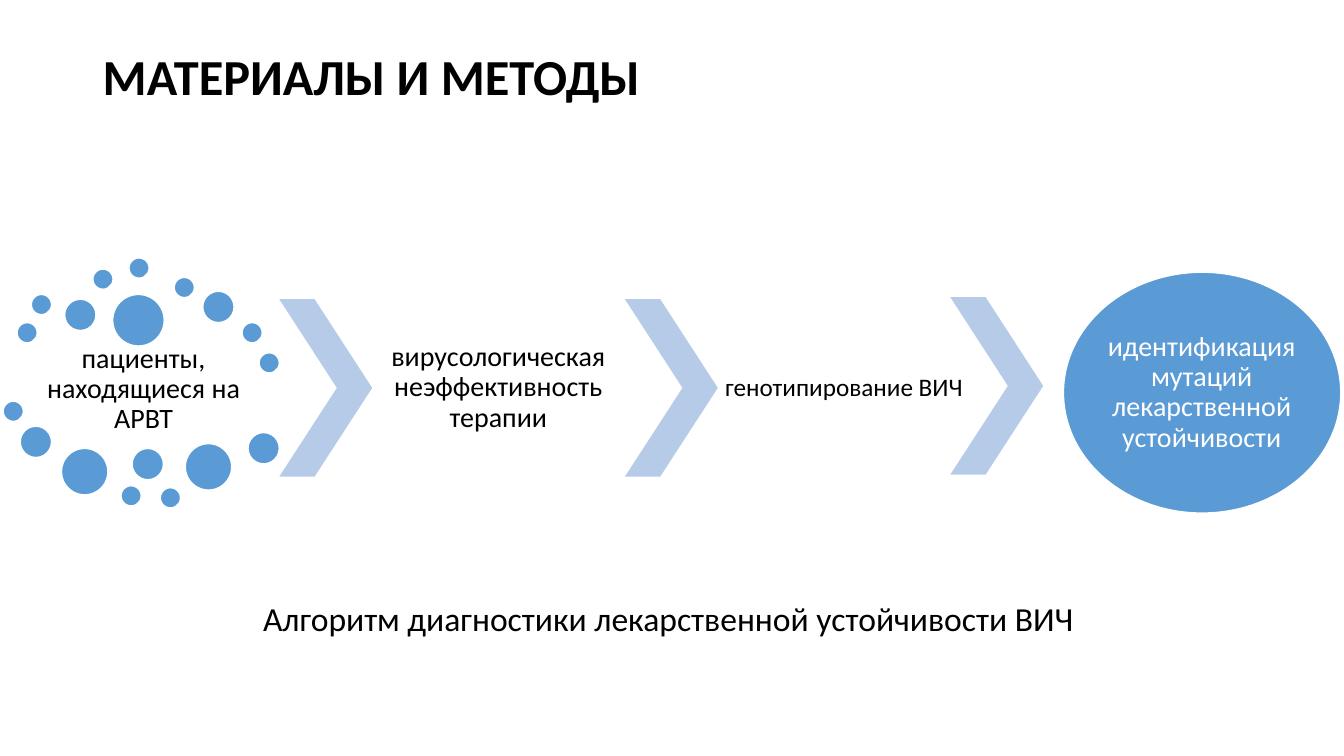
from typing import NamedTuple

from pptx import Presentation
from pptx import util as u
from pptx.dml.color import RGBColor
from pptx.enum import shapes as sh, text as tx

HUES = {"blue": "5B9BD5", "pale": "B5CBE7", "white": "FFFFFF", "black": "000000"}
FONT = "Calibri"
SMALL, MID, LARGE, HUGE = 0.51, 0.79, 1.17, 1.3


class Box(NamedTuple):
    x: float
    y: float
    w: float
    h: float


class Dot(NamedTuple):
    x: float
    y: float
    size: float


class Label(NamedTuple):
    box: Box
    words: str
    size: int = 20
    hue: str = "black"
    bold: bool = False
    align: tx.PP_ALIGN = tx.PP_ALIGN.CENTER
    inset: tuple[float, float] = (0.07, 0.07)
    space: float = 0.9
    anchor: tx.MSO_ANCHOR = tx.MSO_ANCHOR.MIDDLE
    wrap: bool = True


DOTS = [
    Dot(0.43, 8.13, SMALL), Dot(0.79, 7.42, SMALL), Dot(1.63, 7.54, MID),
    Dot(2.34, 6.78, SMALL), Dot(3.25, 6.5, SMALL), Dot(4.39, 6.99, SMALL),
    Dot(5.11, 7.34, MID), Dot(6.1, 8.13, SMALL), Dot(6.53, 8.89, SMALL),
    Dot(2.84, 7.42, HUGE), Dot(0.08, 10.11, SMALL), Dot(0.51, 10.74, MID),
    Dot(1.55, 11.3, LARGE), Dot(3.05, 12.24, SMALL), Dot(3.33, 11.3, MID),
    Dot(4.04, 12.29, SMALL), Dot(4.67, 11.18, LARGE), Dot(6.25, 10.9, MID),
]
ARROWS = [Box(x, y, 2.34, 4.47) for x, y in ((7.04, 7.54), (15.75, 7.54), (23.95, 7.49))]
GOAL = Box(26.8, 6.86, 6.99, 6.07)
LABELS = [
    Label(Box(0.43, 7.95, 6.38, 3.73), "пациенты, находящиеся на АРВТ"),
    Label(Box(9.37, 7.54, 6.38, 4.47), "вирусологическая неэффективность терапии"),
    Label(Box(18.08, 7.54, 6.38, 4.47), "генотипирование ВИЧ", 18),
    Label(Box(27.81, 7.75, 4.95, 4.29), "идентификация мутаций лекарственной устойчивости",
          hue="white", inset=(0, 0)),
    Label(Box(2.34, 1.02, 29.21, 1.93), "МАТЕРИАЛЫ И МЕТОДЫ", 36, bold=True,
          align=tx.PP_ALIGN.LEFT, inset=(0.25, 0.13)),
    Label(Box(6.38, 14.94, 21.13, 1.27), "Алгоритм диагностики лекарственной устойчивости ВИЧ", 24,
          align=tx.PP_ALIGN.LEFT, inset=(0.25, 0.13), space=1.0,
          anchor=tx.MSO_ANCHOR.TOP, wrap=False),
]


def tint(name: str) -> RGBColor:
    return RGBColor.from_string(HUES[name])


def draw_shape(slide, kind: sh.MSO_SHAPE, box: Box, hue: str):
    shape = slide.shapes.add_shape(kind, *map(u.Cm, box))
    shape.shadow.inherit = False
    shape.fill.solid()
    shape.fill.fore_color.rgb = tint(hue)
    return shape


def draw_oval(slide, box: Box) -> None:
    oval = draw_shape(slide, sh.MSO_SHAPE.OVAL, box, "blue")
    oval.line.color.rgb = tint("white")
    oval.line.width = u.Pt(1)


def draw_arrow(slide, box: Box) -> None:
    arrow = draw_shape(slide, sh.MSO_SHAPE.CHEVRON, box, "pale")
    arrow.adjustments[0] = 0.62
    arrow.line.fill.background()


def draw_label(slide, label: Label) -> None:
    frame = slide.shapes.add_textbox(*map(u.Cm, label.box)).text_frame
    frame.word_wrap = label.wrap
    frame.vertical_anchor = label.anchor
    if not label.wrap:
        frame.auto_size = tx.MSO_AUTO_SIZE.SHAPE_TO_FIT_TEXT
    side, edge = map(u.Cm, label.inset)
    frame.margin_left = frame.margin_right = side
    frame.margin_top = frame.margin_bottom = edge
    para = frame.paragraphs[0]
    para.alignment = label.align
    para.line_spacing = label.space
    run = para.add_run()
    run.text = label.words
    run.font.name = FONT
    run.font.size = u.Pt(label.size)
    run.font.bold = label.bold
    run.font.color.rgb = tint(label.hue)


def main() -> None:
    deck = Presentation()
    deck.slide_width, deck.slide_height = u.Cm(33.87), u.Cm(19.05)
    slide = deck.slides.add_slide(deck.slide_layouts[6])
    for dot in DOTS:
        draw_oval(slide, Box(dot.x, dot.y, dot.size, dot.size))
    for arrow in ARROWS:
        draw_arrow(slide, arrow)
    draw_oval(slide, GOAL)
    for label in LABELS:
        draw_label(slide, label)
    deck.save("out.pptx")


if __name__ == "__main__":
    main()
